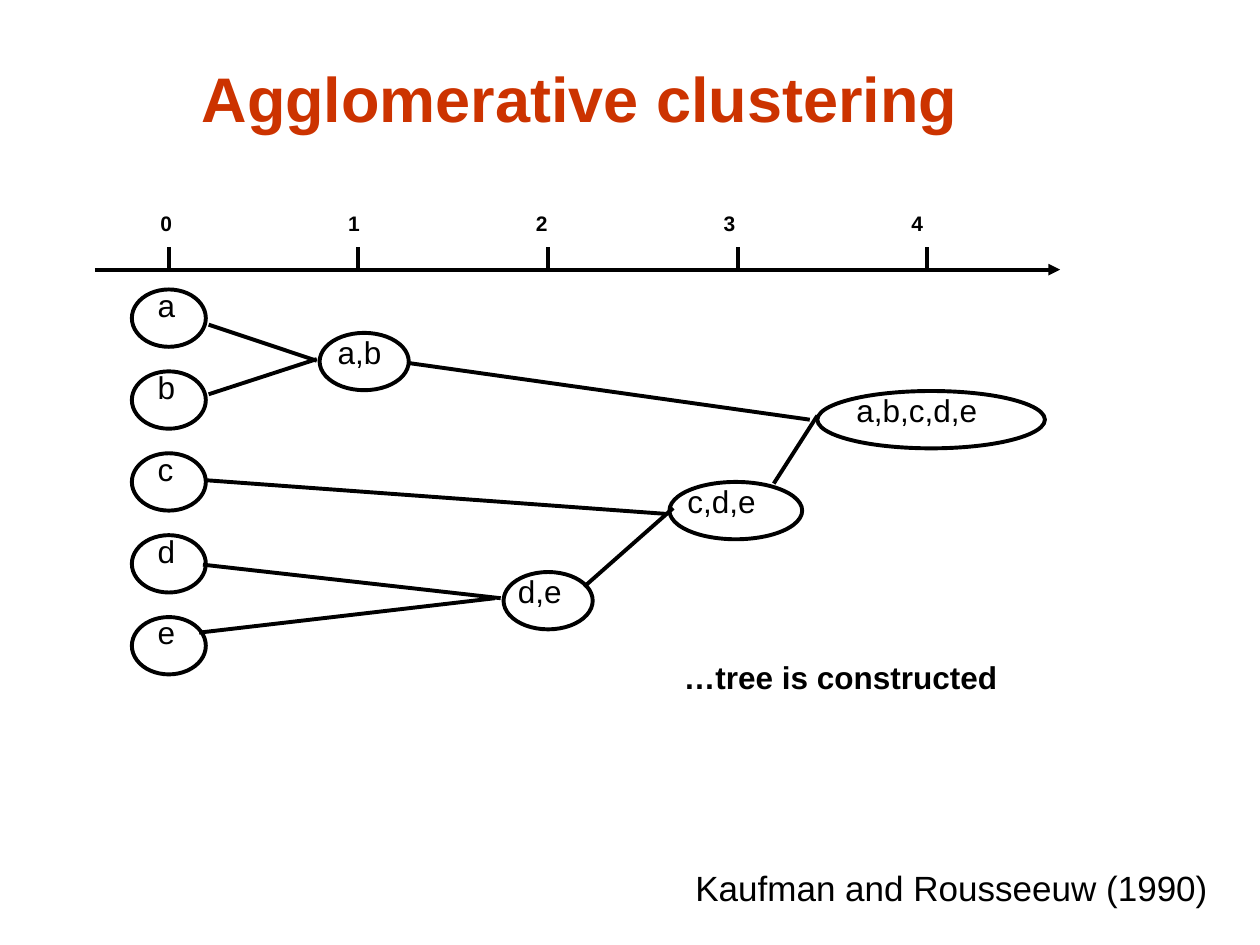
"""Build a slide that shows agglomerative clustering as a tree under a step axis."""
from dataclasses import dataclass

from lxml import etree
from pptx import Presentation
from pptx import util as u
from pptx.dml.color import RGBColor
from pptx.enum import shapes, text
from pptx.oxml import ns


@dataclass(frozen=True)
class Theme:
    """Colours, font, type sizes and line width of the slide."""
    ink: str = "000000"
    accent: str = "CC3300"
    font: str = "Arial"
    title: int = 36
    source: int = 20
    body: int = 18
    tick: int = 12
    stroke: float = 2.25


@dataclass(frozen=True)
class Grid:
    """A region whose places are counted in columns and rows."""
    left: float
    top: float
    column: float
    row: float

    def point(self, column, row):
        """Return the slide position of a grid point."""
        return (u.Inches(self.left + column * self.column),
                u.Inches(self.top + row * self.row))

    def box(self, column, row, width, height):
        """Return left, top, width and height of a grid area."""
        return (*self.point(column, row),
                u.Inches(width * self.column), u.Inches(height * self.row))


THEME = Theme()
WIDTH, HEIGHT = 10, 7.5
PAGE = Grid(0, 0, WIDTH, HEIGHT)
STEP = 1.505
AXIS = Grid(1.34, 1.62, STEP, 0.52)
TREE = Grid(1.34, 2.525, STEP, 0.65)
STEPS = 5
LEAVES = "abcde"
MERGES = [
    ("a,b", 1.03, 0.53, 0.47, 0.03, 0.07),
    ("d,e", 2, 3.45, 0.47, 0.01, 0.08),
    ("c,d,e", 2.99, 2.35, 0.7, 0.03, 0.08),
    ("a,b,c,d,e", 4.02, 1.24, 1.2, 0.14, 0.08),
]
LINKS = [
    (0.21, 0.08, 0.78, 0.52),
    (0.21, 0.93, 0.78, 0.5),
    (0.18, 3.01, 1.75, 3.42),
    (0.16, 3.84, 1.72, 3.42),
    (2.19, 3.28, 2.66, 2.32),
    (0.2, 1.98, 2.62, 2.39),
    (3.19, 2.02, 3.42, 1.19),
    (1.27, 0.55, 3.38, 1.24),
]


def write(frame, wording, size, bold=False, color=THEME.ink):
    """Set and format the left-aligned wording of a text frame."""
    frame.text = wording
    frame.word_wrap = True
    frame.auto_size = text.MSO_AUTO_SIZE.NONE
    frame.vertical_anchor = text.MSO_ANCHOR.TOP
    paragraph = frame.paragraphs[0]
    paragraph.alignment = text.PP_ALIGN.LEFT
    font = paragraph.runs[0].font
    font.name, font.size, font.bold = THEME.font, u.Pt(size), bold
    font.color.rgb = RGBColor.from_string(color)


def add_label(slide, area, wording, size, bold=False):
    """Add a text box in the given area."""
    write(slide.shapes.add_textbox(*area).text_frame, wording, size, bold)


def ink_line(line):
    """Give a line the theme's colour and width."""
    line.color.rgb = RGBColor.from_string(THEME.ink)
    line.width = u.Pt(THEME.stroke)


def add_line(slide, start, end, arrow=False):
    """Add a straight line, with an arrowhead at its end if asked."""
    connector = slide.shapes.add_connector(
        shapes.MSO_CONNECTOR.STRAIGHT, *start, *end)
    ink_line(connector.line)
    properties = connector._element.spPr
    if arrow:
        outline = properties.find(ns.qn("a:ln"))
        etree.SubElement(outline, ns.qn("a:tailEnd"), type="triangle")
    etree.SubElement(properties, ns.qn("a:effectLst"))


def add_cluster(slide, grid, name, column, row, width, indent, lift):
    """Add a cluster's ellipse, centred on a grid point, and its name."""
    height = 0.7
    left, top = column - width / 2, row - height / 2
    ellipse = slide.shapes.add_shape(
        shapes.MSO_SHAPE.OVAL, *grid.box(left, top, width, height))
    ellipse.shadow.inherit = False
    ellipse.fill.background()
    ink_line(ellipse.line)
    label_width = max(width, 0.25) if len(name) > 1 else 0.25
    add_label(slide, grid.box(left + indent, top - lift, label_width, 0.77),
              name, THEME.body)


def add_tree(slide, grid):
    """Add the leaves, the merged clusters and the links between them."""
    for row, leaf in enumerate(LEAVES):
        add_cluster(slide, grid, leaf, 0, row, 0.39, 0.07, 0.12)
    for merge in MERGES:
        add_cluster(slide, grid, *merge)
    for x1, y1, x2, y2 in LINKS:
        add_line(slide, grid.point(x1, y1), grid.point(x2, y2))


def add_axis(slide, grid):
    """Add the step axis with its ticks and numbers."""
    add_line(slide, grid.point(-0.39, 1), grid.point(4.7, 1), arrow=True)
    for step in range(STEPS):
        add_line(slide, grid.point(step, 1), grid.point(step, 0.65))
        add_label(slide, grid.box(step * 0.99 - 0.11, 0, 0.2, 0.58),
                  str(step), THEME.tick, bold=True)


def add_wording(slide, page):
    """Place the title, the remark on the tree and the source."""
    title = slide.shapes.title
    title.left, title.top, title.width, title.height = page.box(
        0.15, 0.056, 0.63, 0.095)
    write(title.text_frame, "Agglomerative clustering", THEME.title,
          True, THEME.accent)
    add_label(slide, page.box(0.533, 0.69, 0.35, 0.067),
              "…tree is constructed", THEME.body, bold=True)
    add_label(slide, page.box(0.542, 0.91, 0.44, 0.058),
              "Kaufman and Rousseeuw (1990)", THEME.source)


def main():
    """Build and save the presentation."""
    deck = Presentation()
    deck.slide_width, deck.slide_height = u.Inches(WIDTH), u.Inches(HEIGHT)
    slide = deck.slides.add_slide(deck.slide_layouts[5])
    add_tree(slide, TREE)
    add_axis(slide, AXIS)
    add_wording(slide, PAGE)
    deck.save("out.pptx")


if __name__ == "__main__":
    main()
